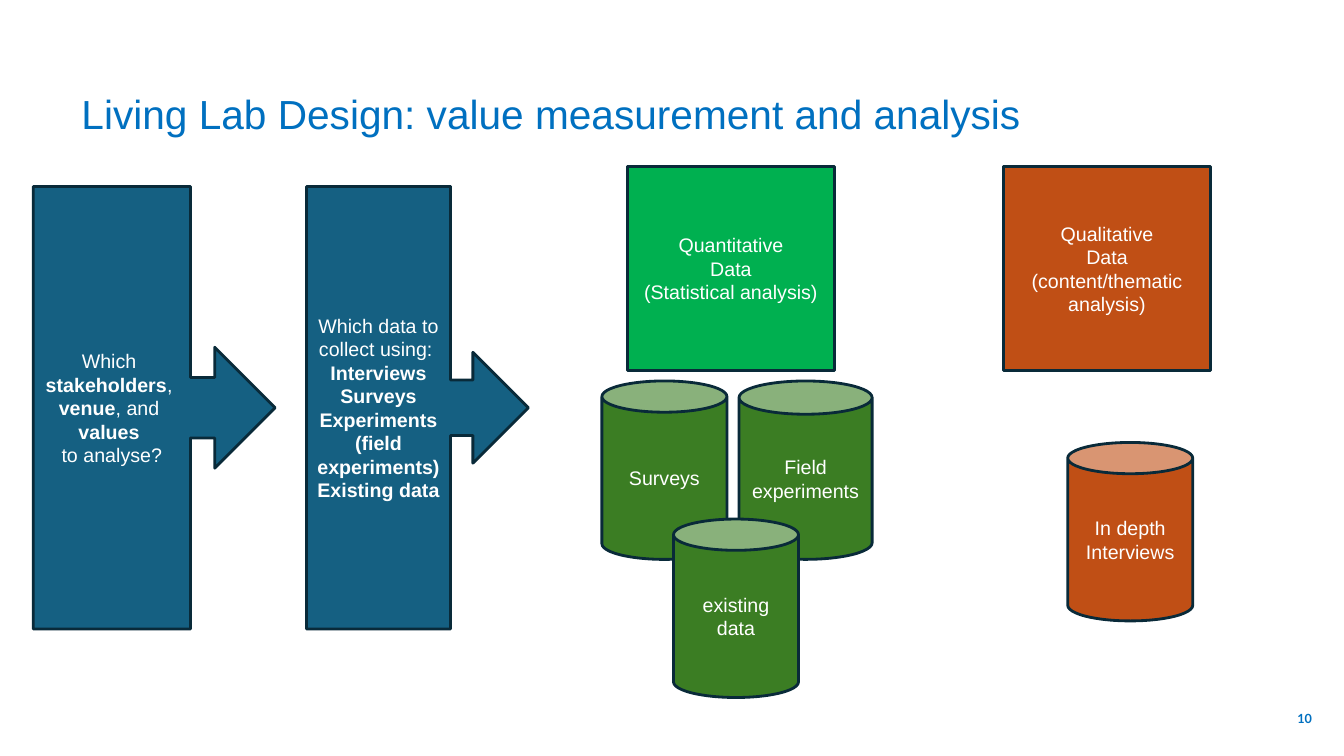
import pptx
import pptx.dml.color
import pptx.enum.shapes
import pptx.enum.text
import pptx.util

Inches = pptx.util.Inches
Shape = pptx.enum.shapes.MSO_SHAPE
Align = pptx.enum.text.PP_ALIGN
Anchor = pptx.enum.text.MSO_ANCHOR

COLOURS = {
    "accent": "0070C0",
    "step": "156082",
    "outline": "092A39",
    "qualitative": "C04F15",
    "quantitative": "00B050",
    "source": "3B7D23",
    "text": "FFFFFF",
}
BREAK = ("\n", False)


def colour(name):
    return pptx.dml.color.RGBColor.from_string(COLOURS[name])


def write(frame, paragraphs, size, tint, align, font="Arial"):
    frame.word_wrap = True
    frame.vertical_anchor = Anchor.MIDDLE
    for index, spans in enumerate(paragraphs):
        para = frame.paragraphs[0] if index == 0 else frame.add_paragraph()
        para.alignment = align
        for text, bold in spans:
            if text == "\n":
                para.add_line_break()
                continue
            span = para.add_run()
            span.text = text
            span.font.name = font
            span.font.size = pptx.util.Pt(size)
            span.font.bold = bold
            span.font.color.rgb = colour(tint)


def add_label(page, box, text, size, align, font="Arial", bold=False):
    label = page.shapes.add_textbox(*map(Inches, box))
    write(label.text_frame, [[(text, bold)]], size, "accent", align, font)


def add_block(shapes, kind, box, fill, paragraphs):
    block = shapes.add_shape(kind, *map(Inches, box))
    block.shadow.inherit = False
    block.fill.solid()
    block.fill.fore_color.rgb = colour(fill)
    block.line.color.rgb = colour("outline")
    block.line.width = pptx.util.Pt(2)
    write(block.text_frame, paragraphs, 14, "text", Align.CENTER)


def add_steps(page, box):
    left, top, width, height = box
    question = [
        ("Which ", False), BREAK,
        ("stakeholders", True), (", ", False), BREAK,
        ("venue", True), (", and ", False), BREAK,
        ("values ", True), BREAK,
        ("to analyse?", False),
    ]
    methods = ["Interviews", "Surveys", "Experiments (field experiments)", "Existing data"]
    collection = [[("Which data to collect using: ", False)]]
    collection += [[(method, True)] for method in methods]
    second_width = 2.2
    steps = [
        (left, 2.4, [question]),
        (left + width - second_width, second_width, collection),
    ]
    for step_left, step_width, paragraphs in steps:
        add_block(page.shapes, Shape.RIGHT_ARROW_CALLOUT,
                  (step_left, top, step_width, height), "step", paragraphs)


def add_data_family(page, box, heading, heading_left, heading_fill, sources, source_fill):
    left, top = box[:2]
    shapes = page.shapes.add_group_shape().shapes
    add_block(shapes, Shape.RECTANGLE, (left + heading_left, top, 2.06, 2.03),
              heading_fill, [[(line, False)] for line in heading])
    for text, across, down, width in sources:
        add_block(shapes, Shape.CAN, (left + across, top + down, width, 1.77),
                  source_fill, [[(text, False)]])


def build_measurement_page(deck):
    page = deck.slides.add_slide(deck.slide_layouts[6])
    add_label(page, (0.71, 0.4, 11.7, 1.45),
              "Living Lab Design: value measurement and analysis", 29, Align.LEFT)
    add_label(page, (12.52, 6.93, 0.59, 0.4), "10", 9, Align.RIGHT, "Lato", True)
    add_steps(page, (0.33, 1.85, 4.91, 4.39))
    add_data_family(
        page, (9.95, 1.65, 2.06, 4.51),
        ["Qualitative", "Data", "(content/thematic analysis)"], 0, "qualitative",
        [("In depth Interviews", 0.64, 2.74, 1.24)], "qualitative")
    add_data_family(
        page, (5.97, 1.65, 2.68, 5.27),
        ["Quantitative", "Data", "(Statistical analysis)"], 0.25, "quantitative",
        [("Field experiments", 1.36, 2.13, 1.32),
         ("Surveys", 0, 2.13, 1.24),
         ("existing data", 0.71, 3.5, 1.24)], "source")


def main():
    deck = pptx.Presentation()
    deck.slide_width = Inches(13.33)
    deck.slide_height = Inches(7.5)
    build_measurement_page(deck)
    deck.save("out.pptx")


if __name__ == "__main__":
    main()
